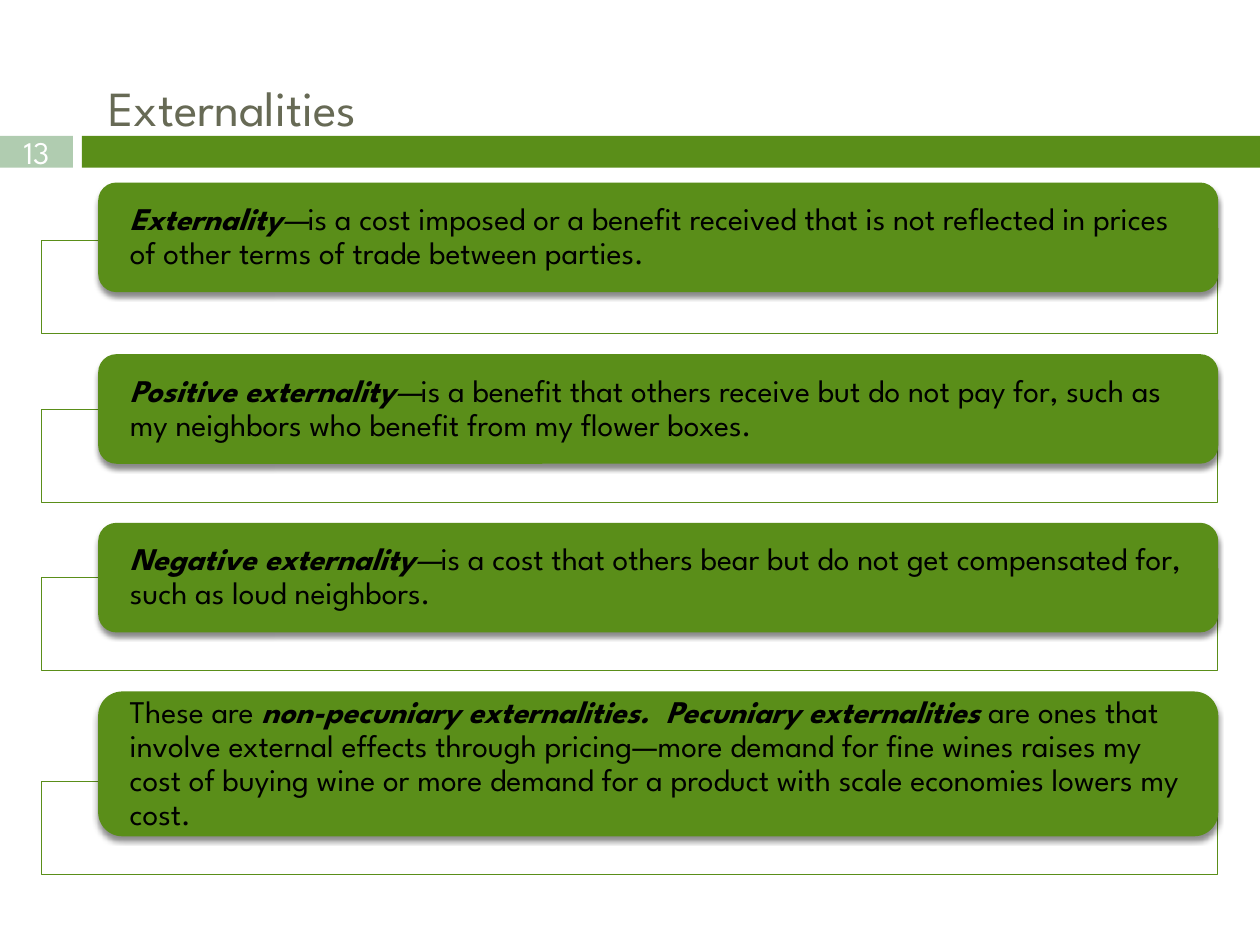
from lxml import etree
from pptx import Presentation
from pptx.dml.color import RGBColor
from pptx.enum import shapes, text
from pptx.oxml import ns
from pptx.util import Cm, Pt

GREEN, SAGE, OLIVE, WHITE, BLACK = "5A8E19", "B0CCB0", "676A55", "FFFFFF", "000000"


def rgb(value):
    return RGBColor.from_string(value)


def add_box(kind, left, top, width, height, fill, line=None):
    sp = s.shapes.add_shape(kind, Cm(left), Cm(top), Cm(width), Cm(height))
    sp.fill.solid()
    sp.fill.fore_color.rgb = rgb(fill)
    if line:
        sp.line.color.rgb = rgb(line)
        sp.line.width = Pt(0.79)
    else:
        sp.line.fill.background()
    sp.shadow.inherit = False
    return sp


prs = Presentation()
prs.slide_width, prs.slide_height = Cm(25.4), Cm(19.05)
s = prs.slides.add_slide(prs.slide_layouts[5])
RECT = shapes.MSO_SHAPE.RECTANGLE
ROUND = shapes.MSO_SHAPE.ROUNDED_RECTANGLE

# Header band with slide number
number = add_box(RECT, 0, 2.74, 1.47, 0.64, SAGE)
add_box(RECT, 1.65, 2.74, 23.75, 0.64, GREEN)
tf = number.text_frame
for name in ("margin_left", "margin_top", "margin_right", "margin_bottom"):
    setattr(tf, name, 0)
tf.vertical_anchor = text.MSO_ANCHOR.MIDDLE
p = tf.paragraphs[0]
p.alignment = text.PP_ALIGN.CENTER
r = p.add_run()
r.text = "13"
for name, value in {"size": Pt(18), "name": "League Spartan"}.items():
    setattr(r.font, name, value)
r.font.color.rgb = rgb(WHITE)

# Title
title = s.shapes.title
for name, value in {"left": 1.7, "top": 1.32, "width": 24.77, "height": 1.65}.items():
    setattr(title, name, Cm(value))
tf = title.text_frame
tf.margin_left = Cm(0.48)
tf.vertical_anchor = text.MSO_ANCHOR.MIDDLE
p = tf.paragraphs[0]
p.alignment = text.PP_ALIGN.LEFT
r = p.add_run()
r.text = "Externalities"
for name, value in {"size": Pt(28), "name": "League Spartan"}.items():
    setattr(r.font, name, value)
r.font.color.rgb = rgb(OLIVE)

# Definitions: frame top, card top, card height, runs of (text, bold, italic)
definitions = [
    (4.85, 3.68, 2.21, [
        ("Externality", True, True), ("—", False, True),
        ("is a cost imposed or a benefit received that is not reflected in prices "
         "of other terms of trade between parties.", False, False)]),
    (8.25, 7.14, 2.21, [
        ("Positive externality", True, True), ("—", False, True),
        ("is a benefit that others receive but do not pay for, such as "
         "my neighbors who benefit from my flower boxes.", False, False)]),
    (11.64, 10.54, 2.21, [
        ("Negative externality", True, True), ("—", False, True),
        ("is a cost that others bear but do not get compensated for, "
         "such as loud neighbors.", False, False)]),
    (15.75, 13.94, 2.92, [
        ("These are ", False, False),
        ("non-pecuniary externalities.  Pecuniary externalities", True, True),
        (" are ones that involve external effects through pricing—more demand for "
         "fine wines raises my cost of buying wine or more demand for a product with "
         "scale economies lowers my cost.", False, False)]),
]

for frame_top, card_top, height, runs in definitions:
    add_box(RECT, 0.84, frame_top, 23.7, 1.88, WHITE, GREEN)
    card = add_box(ROUND, 1.98, card_top, 22.58, height, GREEN)

    # Soft shadow below the card
    effects = card._element.spPr.find(ns.qn("a:effectLst"))
    shadow = etree.SubElement(effects, ns.qn("a:outerShdw"), blurRad=str(Pt(3)),
                              dist=str(Pt(2.4)), dir="5400000", rotWithShape="0")
    color = etree.SubElement(shadow, ns.qn("a:srgbClr"), val=BLACK)
    etree.SubElement(color, ns.qn("a:alpha"), val="45000")

    # Card text; rounded corners already inset it by about 5% of the height
    tf = card.text_frame
    side = Cm(0.64 - 0.05 * height)
    for name, value in {"margin_left": side, "margin_right": side, "margin_top": 0,
                        "margin_bottom": 0, "word_wrap": True,
                        "vertical_anchor": text.MSO_ANCHOR.MIDDLE}.items():
        setattr(tf, name, value)
    p = tf.paragraphs[0]
    p.alignment = text.PP_ALIGN.LEFT
    p.line_spacing = 0.9
    for words, bold, italic in runs:
        r = p.add_run()
        r.text = words
        for name, value in {"size": Pt(18), "name": "League Spartan",
                            "bold": bold, "italic": italic}.items():
            setattr(r.font, name, value)
        r.font.color.rgb = rgb(BLACK)

prs.save("out.pptx")
